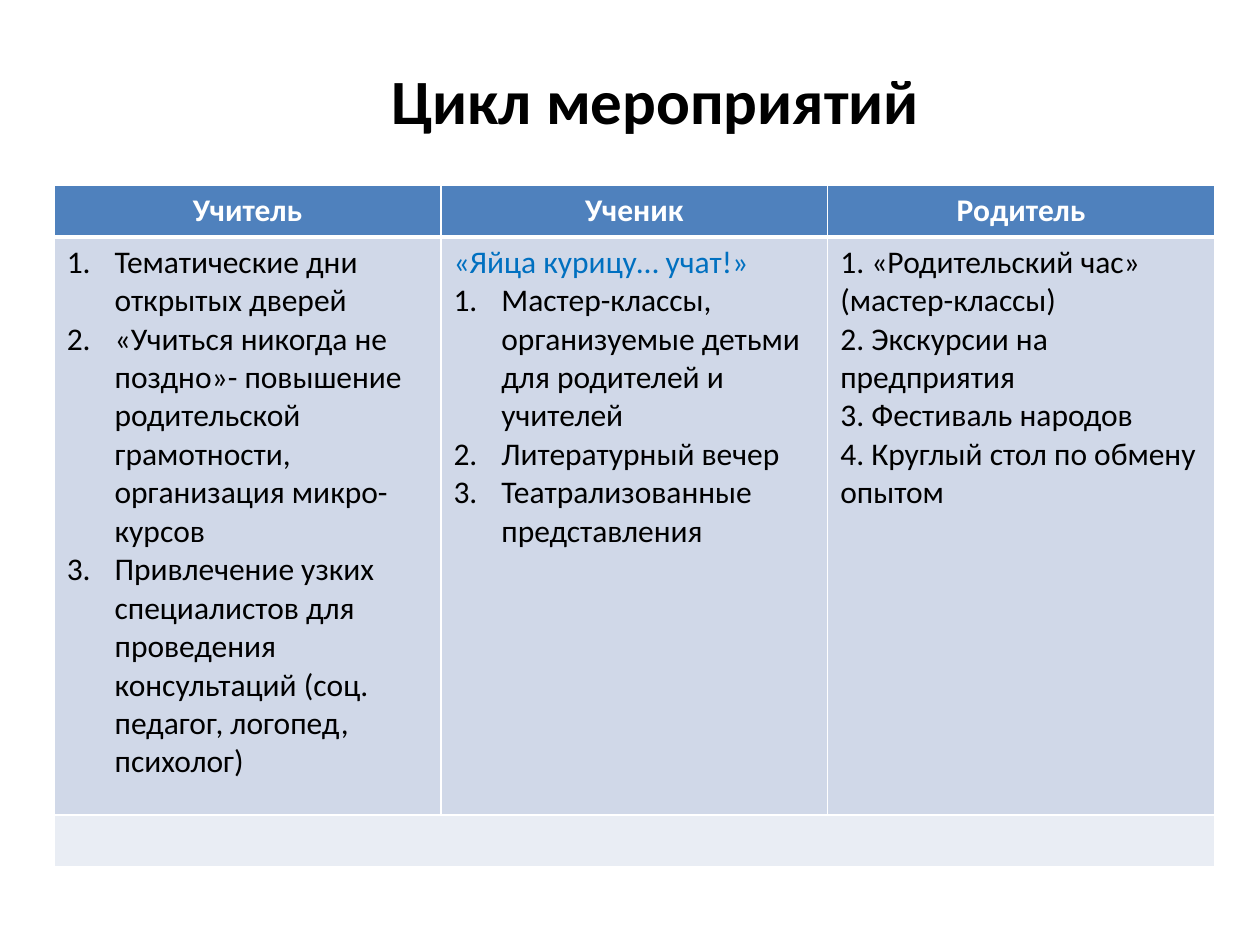
from lxml.etree import SubElement
from pptx import Presentation
from pptx.dml.color import RGBColor
from pptx.enum.text import MSO_AUTO_SIZE, PP_ALIGN
from pptx.oxml.ns import qn
from pptx.util import Inches, Pt

BLACK = RGBColor(0x00, 0x00, 0x00)
WHITE = RGBColor(0xFF, 0xFF, 0xFF)
HEADER_BLUE = RGBColor(0x4F, 0x81, 0xBD)
BODY_BLUE = RGBColor(0xD0, 0xD8, 0xE8)
FOOTER_BLUE = RGBColor(0xE9, 0xED, 0xF4)
MOTTO_BLUE = RGBColor(0x00, 0x70, 0xC0)

FONT = "Calibri"
ROW_HEIGHTS = (0.41, 4.59, 0.41)
HEADINGS = ("Учитель", "Ученик", "Родитель")
MOTTO = "«Яйца курицу… учат!»"
TEACHER_ITEMS = (
    "Тематические дни открытых дверей",
    "«Учиться никогда не поздно»- повышение родительской грамотности, "
    "организация микро-курсов",
    "Привлечение узких специалистов для проведения консультаций "
    "(соц. педагог, логопед, психолог)",
)
STUDENT_ITEMS = (
    "Мастер-классы, организуемые детьми для родителей и учителей",
    "Литературный вечер",
    "Театрализованные представления",
)
PARENT_LINES = (
    "1. «Родительский час»",
    "(мастер-классы)",
    "2. Экскурсии на предприятия",
    "3. Фестиваль народов",
    "4. Круглый стол по обмену опытом",
)


def add_span(para, text, size=18, color=BLACK, bold=False):
    """Add one formatted run to a paragraph."""
    span = para.add_run()
    span.text = text
    span.font.name = FONT
    span.font.size = Pt(size)
    span.font.bold = bold
    span.font.color.rgb = color


def number_para(para):
    """Give a paragraph automatic numbering with a hanging indent."""
    properties = para._p.get_or_add_pPr()
    properties.set("marL", str(Inches(0.38)))
    properties.set("indent", str(-Inches(0.38)))
    SubElement(properties, qn("a:buFont")).set("typeface", "+mj-lt")
    SubElement(properties, qn("a:buAutoNum")).set("type", "arabicPeriod")


def style_cell(cell, fill, top=1, bottom=1):
    """Set the white borders and the fill of a cell."""
    properties = cell._tc.get_or_add_tcPr()
    for side, width in (("L", 1), ("R", 1), ("T", top), ("B", bottom)):
        line = SubElement(properties, qn(f"a:ln{side}"), w=str(Pt(width)))
        solid = SubElement(line, qn("a:solidFill"))
        SubElement(solid, qn("a:srgbClr")).set("val", str(WHITE))
    cell.fill.solid()
    cell.fill.fore_color.rgb = fill


def fill_cell(cell, lines):
    """Write (text, colour, numbered) lines as paragraphs of a cell."""
    frame = cell.text_frame
    for index, (text, color, numbered) in enumerate(lines):
        para = frame.add_paragraph() if index else frame.paragraphs[0]
        if numbered:
            number_para(para)
        add_span(para, text, color=color)


def add_title(page, left, top, width, height):
    """Place the centred slide title."""
    box = page.shapes.add_textbox(left, top, width, height)
    frame = box.text_frame
    frame.word_wrap = True
    frame.auto_size = MSO_AUTO_SIZE.SHAPE_TO_FIT_TEXT
    para = frame.paragraphs[0]
    para.alignment = PP_ALIGN.CENTER
    add_span(para, "Цикл мероприятий", size=36, bold=True)


def add_events_table(page, left, top, width, height):
    """Place the table of events for teachers, students and parents."""
    table = page.shapes.add_table(
        len(ROW_HEIGHTS), len(HEADINGS), left, top, width, height
    ).table
    for row, row_height in zip(table.rows, ROW_HEIGHTS):
        row.height = Inches(row_height)

    bodies = (
        [(text, BLACK, True) for text in TEACHER_ITEMS],
        [(MOTTO, MOTTO_BLUE, False)]
        + [(text, BLACK, True) for text in STUDENT_ITEMS],
        [(text, BLACK, False) for text in PARENT_LINES],
    )
    for column, (heading, lines) in enumerate(zip(HEADINGS, bodies)):
        header, body, footer = (
            table.cell(row, column) for row in range(len(ROW_HEIGHTS))
        )
        style_cell(header, HEADER_BLUE, bottom=3)
        style_cell(body, BODY_BLUE, top=3)
        style_cell(footer, FOOTER_BLUE)
        para = header.text_frame.paragraphs[0]
        para.alignment = PP_ALIGN.CENTER
        add_span(para, heading, color=WHITE, bold=True)
        fill_cell(body, lines)
    table.cell(2, 0).merge(table.cell(2, 2))


def main():
    """Build and save the deck."""
    deck = Presentation()
    deck.slide_width = Inches(10)
    deck.slide_height = Inches(7.5)
    page = deck.slides.add_slide(deck.slide_layouts[6])
    add_title(page, Inches(1.3), Inches(0.44), Inches(7.8), Inches(0.71))
    add_events_table(page, Inches(0.43), Inches(1.47), Inches(9.21), Inches(5.41))
    deck.save("out.pptx")


if __name__ == "__main__":
    main()
